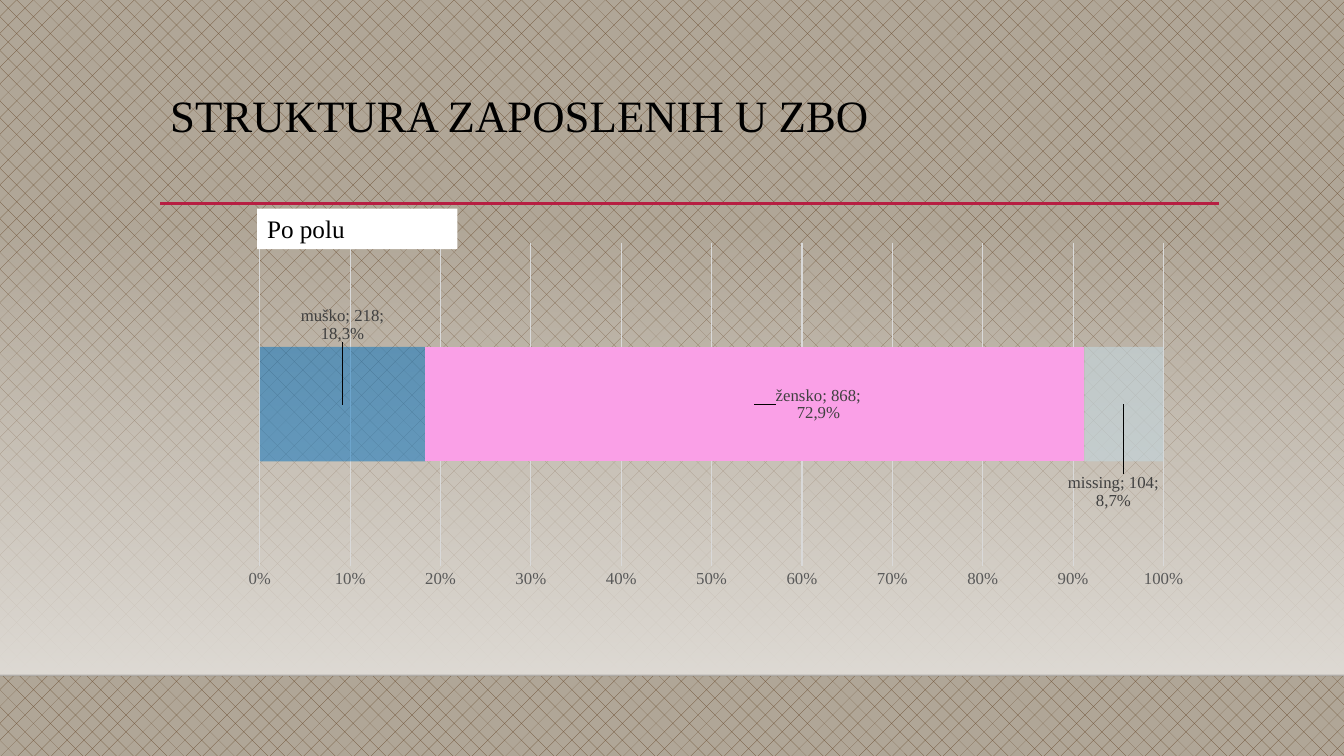
import pptx
import pptx.chart.data
import pptx.dml.color
import pptx.enum.chart
import pptx.enum.dml
import pptx.enum.shapes
import pptx.enum.text
import pptx.oxml
import pptx.oxml.ns
import pptx.util
from lxml import etree
from pptx.dml.color import RGBColor
from pptx.util import Cm, Pt

FONT = "Times New Roman"
BLACK = RGBColor(0x00, 0x00, 0x00)
WHITE = RGBColor(0xFF, 0xFF, 0xFF)
BROWN = RGBColor(0x6A, 0x4C, 0x2E)
TAUPE = RGBColor(0xB0, 0xA6, 0x97)
MIST = RGBColor(0xDF, 0xDB, 0xD5)
CRIMSON = RGBColor(0xB7, 0x1E, 0x42)
EDGE = RGBColor(0x00, 0x00, 0x01)
GRID = RGBColor(0xD9, 0xD9, 0xD9)
AXIS_TEXT = RGBColor(0x59, 0x59, 0x59)
LABEL_TEXT = RGBColor(0x40, 0x40, 0x40)
BLUE = RGBColor(0x00, 0x70, 0xC0)
PINK = RGBColor(0xFA, 0xA0, 0xE7)
PALE = RGBColor(0xC3, 0xD3, 0xD9)
qn = pptx.oxml.ns.qn


def set_opacity(element, percent):
    color = next(element.iter(qn("a:srgbClr")))
    etree.SubElement(color, qn("a:alpha")).set("val", str(percent * 1000))


def make_layout(**settings):
    layout = etree.Element(qn("c:layout"))
    manual = etree.SubElement(layout, qn("c:manualLayout"))
    for tag, value in settings.items():
        etree.SubElement(manual, qn("c:" + tag)).set("val", str(value))
    return layout


deck = pptx.Presentation()
deck.slide_width, deck.slide_height = Cm(33.87), Cm(19.05)
slide = deck.slides.add_slide(deck.slide_layouts[6])
shapes = slide.shapes

# Patterned background
backdrop = slide.background.fill
backdrop.patterned()
backdrop.pattern = pptx.enum.dml.MSO_PATTERN.DOTTED_DIAMOND
backdrop.fore_color.rgb = BROWN
backdrop.back_color.rgb = TAUPE

# Fade towards the floor line
fade = shapes.add_shape(pptx.enum.shapes.MSO_SHAPE.RECTANGLE,
                        0, Cm(5.61), deck.slide_width, Cm(11.41))
fade.shadow.inherit = False
fade.line.fill.background()
fade.fill.gradient()
fade.fill.gradient_angle = 270
for stop in fade.fill.gradient_stops:
    stop.color.rgb = MIST
set_opacity(fade.fill._xPr, 0)

# Floor line and title rule
for left, right, y, color, width, opacity in [
    (0, 33.87, 17.02, EDGE, 1, 20),
    (4.04, 30.73, 5.13, CRIMSON, 2.5, 100),
]:
    rule = shapes.add_connector(pptx.enum.shapes.MSO_CONNECTOR.STRAIGHT,
                                Cm(left), Cm(y), Cm(right), Cm(y))
    rule.line.color.rgb = color
    rule.line.width = Pt(width)
    properties = rule._element.spPr
    if opacity < 100:
        set_opacity(properties, opacity)
    etree.SubElement(properties, qn("a:effectLst"))

# Title
title = shapes.add_textbox(Cm(4.04), Cm(2.24), Cm(26.67), Cm(2.92))
title.text_frame.word_wrap = True
heading = title.text_frame.paragraphs[0]
heading.line_spacing = 0.9
heading_run = heading.add_run()
heading_run.text = "STRUKTURA ZAPOSLENIH U ZBO"
heading_run.font.name, heading_run.font.size = FONT, Pt(32)
heading_run.font.color.rgb = BLACK

# Employees by sex: name, count, share, colour, opacity, label offset
groups = [
    ("muško", 218, "18,3%", BLUE, 50, (0, -0.21)),
    ("žensko", 868, "72,9%", PINK, 100, (0.06, 0)),
    ("missing", 104, "8,7%", PALE, 67, (-0.01, 0.23)),
]
staff = pptx.chart.data.CategoryChartData()
staff.categories = ["1"]
for name, count, *_ in groups:
    staff.add_series(name, [count])
chart = shapes.add_chart(pptx.enum.chart.XL_CHART_TYPE.BAR_STACKED_100,
                         Cm(4.04), Cm(5.59), Cm(26.67), Cm(9.58), staff).chart
chart.has_legend = False
chart.has_title = False
chart.font.name, chart.font.size = FONT, Pt(10)
chart.font.color.rgb = BLACK

plot = chart.plots[0]
plot.gap_width, plot.overlap = 182, 100
plot.vary_by_categories = False
plot_area = chart._chartSpace.chart.plotArea
for old_layout in plot_area.findall(qn("c:layout")):
    plot_area.remove(old_layout)
plot_area.insert(0, make_layout(layoutTarget="inner", xMode="edge", yMode="edge",
                                x=0.094, y=0.055, w=0.854, h=0.85))

# Axes
chart.category_axis.visible = False
chart.category_axis.has_major_gridlines = False
share_axis = chart.value_axis
share_axis.major_tick_mark = pptx.enum.chart.XL_TICK_MARK.NONE
share_axis.format.line.fill.background()
share_axis.has_major_gridlines = True
share_axis.major_gridlines.format.line.color.rgb = GRID
share_axis.major_gridlines.format.line.width = Pt(0.75)
share_axis.tick_labels.number_format = "0%"
share_axis.tick_labels.number_format_is_linked = False
share_axis.tick_labels.font.name = FONT
share_axis.tick_labels.font.size = Pt(12)
share_axis.tick_labels.font.color.rgb = AXIS_TEXT

# Bars and their labels
for series, (name, count, share, color, opacity, (dx, dy)) in zip(plot.series, groups):
    series.format.fill.solid()
    series.format.fill.fore_color.rgb = color
    if opacity < 100:
        set_opacity(series._element.spPr, opacity)
    labels = series.data_labels
    labels.show_value = labels.show_series_name = True
    labels.font.name, labels.font.size = FONT, Pt(12)
    labels.font.color.rgb = LABEL_TEXT
    label_frame = series.points[0].data_label.text_frame
    for paragraph, words in [(label_frame.paragraphs[0], f"{name}; {count};"),
                             (label_frame.add_paragraph(), share)]:
        run = paragraph.add_run()
        run.text = words
        run.font.name, run.font.size = FONT, Pt(12)
        run.font.color.rgb = LABEL_TEXT
    label = next(series._element.iter(qn("c:dLbl")))
    label.insert(1, make_layout(x=dx, y=dy))

# Chart caption
caption = shapes.add_shape(pptx.enum.shapes.MSO_SHAPE.RECTANGLE,
                           Cm(6.48), Cm(5.26), Cm(5.05), Cm(1.02))
caption.shadow.inherit = False
caption.fill.solid()
caption.fill.fore_color.rgb = WHITE
caption.line.fill.background()
caption.text_frame.word_wrap = True
caption.text_frame.auto_size = pptx.enum.text.MSO_AUTO_SIZE.SHAPE_TO_FIT_TEXT
caption.text_frame.vertical_anchor = pptx.enum.text.MSO_ANCHOR.TOP
caption_line = caption.text_frame.paragraphs[0]
caption_line.alignment = pptx.enum.text.PP_ALIGN.LEFT
caption_run = caption_line.add_run()
caption_run.text = "Po polu"
caption_run.font.name, caption_run.font.size = FONT, Pt(18)
caption_run.font.color.rgb = BLACK

deck.save("out.pptx")
